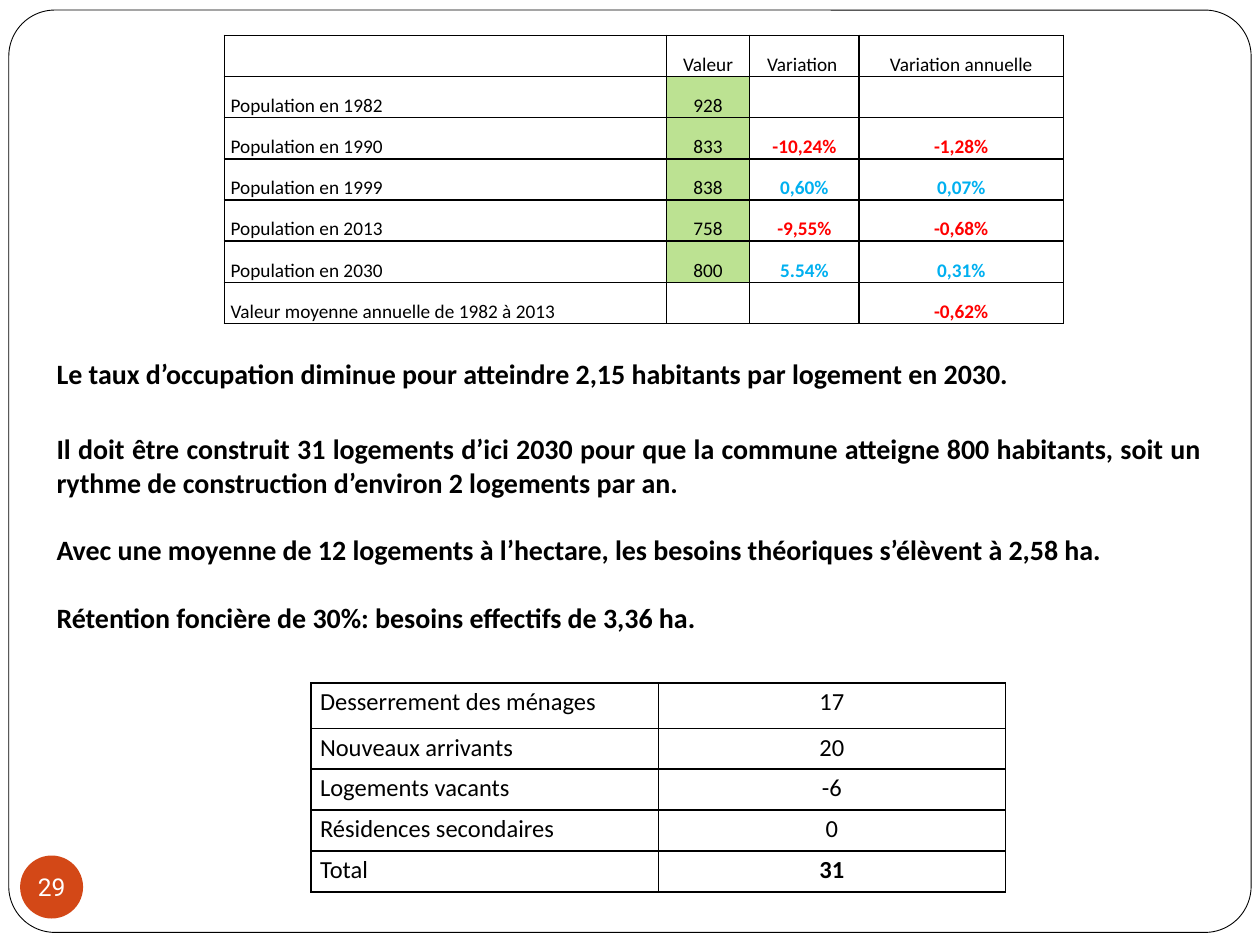
from lxml import etree
from pptx import Presentation
from pptx.dml.color import RGBColor
from pptx.enum.shapes import MSO_SHAPE
from pptx.enum.text import MSO_ANCHOR, PP_ALIGN
from pptx.oxml.ns import qn
from pptx.util import Inches, Pt

ROUNDED, OVAL = MSO_SHAPE.ROUNDED_RECTANGLE, MSO_SHAPE.OVAL
TOP, MIDDLE, BOTTOM = MSO_ANCHOR.TOP, MSO_ANCHOR.MIDDLE, MSO_ANCHOR.BOTTOM
LEFT, CENTER, JUSTIFY = PP_ALIGN.LEFT, PP_ALIGN.CENTER, PP_ALIGN.JUSTIFY

BLACK, WHITE, ORANGE = "000000", "FFFFFF", "D34817"
GREEN, RED, BLUE = "BCE292", "FF0000", "00B0F0"

POPULATION = [
    ("", "Valeur", "Variation ", "Variation annuelle"),
    ("Population en 1982", "928", "", ""),
    ("Population en 1990", "833", "-10,24%", "-1,28%"),
    ("Population en 1999", "838", "0,60%", "0,07%"),
    ("Population en 2013", "758", "-9,55%", "-0,68%"),
    ("Population en 2030", "800", "5.54%", "0,31%"),
    ("Valeur moyenne annuelle de 1982 à 2013", "", "", "-0,62%"),
]
HOUSING = [
    ("Desserrement des ménages", "17"),
    ("Nouveaux arrivants", "20"),
    ("Logements vacants", "-6"),
    ("Résidences secondaires", "0"),
    ("Total", "31"),
]
OCCUPANCY = ["Le taux d’occupation diminue pour atteindre 2,15 habitants par logement en 2030."]
NEEDS = [
    "Il doit être construit 31 logements d’ici 2030 pour que la commune atteigne "
    "800 habitants, soit un rythme de construction d’environ 2 logements par an.",
    "Avec une moyenne de 12 logements à l’hectare, les besoins théoriques s’élèvent à 2,58 ha.",
    "Rétention foncière de 30%: besoins effectifs de 3,36 ha.",
]


def color(value):
    return RGBColor.from_string(value)


def write(paragraph, text, size, alignment, hue=BLACK, bold=False, font="Calibri"):
    paragraph.text = text
    paragraph.alignment = alignment
    for run in paragraph.runs:
        run.font.name = font
        run.font.size = Pt(size)
        run.font.bold = bold
        run.font.color.rgb = color(hue)


def add_frame(slide, box):
    shape = slide.shapes.add_shape(ROUNDED, *map(Inches, box))
    shape.shadow.inherit = False
    shape.adjustments[0] = 0.05
    shape.fill.solid()
    shape.fill.fore_color.rgb = color(WHITE)
    shape.line.color.rgb = color(BLACK)
    shape.line.width = Pt(0.5)


def add_page_number(slide, box, number):
    shape = slide.shapes.add_shape(OVAL, *map(Inches, box))
    shape.shadow.inherit = False
    shape.fill.solid()
    shape.fill.fore_color.rgb = color(ORANGE)
    shape.line.fill.background()
    frame = shape.text_frame
    frame.margin_left = frame.margin_right = frame.margin_top = frame.margin_bottom = 0
    frame.word_wrap = False
    frame.vertical_anchor = MIDDLE
    write(frame.paragraphs[0], number, 14, CENTER, WHITE, font="Roboto")


def add_statement(slide, box, texts, alignment):
    frame = slide.shapes.add_textbox(*map(Inches, box)).text_frame
    frame.word_wrap = True
    frame.vertical_anchor = MIDDLE
    frame.text = "\n".join(texts)
    for index, paragraph in enumerate(frame.paragraphs):
        write(paragraph, texts[index], 16, alignment, bold=True)
        paragraph.space_before = Pt(19.5 if index else 0)


def set_borders(cell):
    properties = cell._tc.get_or_add_tcPr()
    for index, side in enumerate(("lnL", "lnR", "lnT", "lnB")):
        line = etree.Element(qn(f"a:{side}"), w=str(Pt(1)))
        fill = etree.SubElement(line, qn("a:solidFill"))
        etree.SubElement(fill, qn("a:srgbClr"), val=BLACK)
        properties.insert(index, line)


def fill_cell(cell, text, size, alignment, margin, anchor, hue, bold, background):
    cell.margin_left = cell.margin_right = Inches(margin)
    cell.margin_top = cell.margin_bottom = 0
    cell.vertical_anchor = anchor
    if background:
        cell.fill.solid()
        cell.fill.fore_color.rgb = color(background)
    else:
        cell.fill.background()
    set_borders(cell)
    if text:
        paragraph = cell.text_frame.paragraphs[0]
        write(paragraph, text, size, alignment, hue, bold)
        paragraph.line_spacing = 1.15


def add_grid(slide, box, data, widths, heights, size, margin, anchor, label_alignment, style):
    shape = slide.shapes.add_table(len(data), len(widths), *map(Inches, box))
    table = shape.table
    table.first_row = table.horz_banding = False
    for column, width in zip(table.columns, widths):
        column.width = Inches(width)
    for row, height in zip(table.rows, heights):
        row.height = Inches(height)
    for row, texts in enumerate(data):
        for column, text in enumerate(texts):
            alignment = CENTER if column else label_alignment
            fill_cell(table.cell(row, column), text, size, alignment, margin, anchor,
                      *style(row, column, text))


def population_style(row, column, text):
    if text.endswith("%"):
        return RED if text.startswith("-") else BLUE, True, None
    return BLACK, False, GREEN if column == 1 and text.isdigit() else None


def housing_style(row, column, text):
    return BLACK, column == 1 and row == len(HOUSING) - 1, None


def add_population_table(slide, box):
    heights = [box[3] / len(POPULATION)] * len(POPULATION)
    add_grid(slide, box, POPULATION, [3.51, 0.66, 0.87, 1.62], heights, 11, 0.05,
             BOTTOM, LEFT, population_style)


def add_housing_table(slide, box):
    first = 0.36
    others = len(HOUSING) - 1
    heights = [first] + [(box[3] - first) / others] * others
    add_grid(slide, box, HOUSING, [box[2] / 2] * 2, heights, 14, 0.07,
             TOP, JUSTIFY, housing_style)


def main():
    presentation = Presentation()
    presentation.slide_width = Inches(10)
    presentation.slide_height = Inches(7.5)
    slide = presentation.slides.add_slide(presentation.slide_layouts[6])
    add_frame(slide, (0.07, 0.08, 9.86, 7.32))
    add_page_number(slide, (0.16, 6.79, 0.5, 0.5), "29")
    add_housing_table(slide, (2.47, 5.42, 5.51, 1.66))
    add_statement(slide, (0.35, 2.78, 9.38, 0.37), OCCUPANCY, LEFT)
    add_statement(slide, (0.35, 3.37, 9.29, 1.72), NEEDS, JUSTIFY)
    add_population_table(slide, (1.78, 0.28, 6.67, 2.29))
    presentation.save("out.pptx")


if __name__ == "__main__":
    main()
